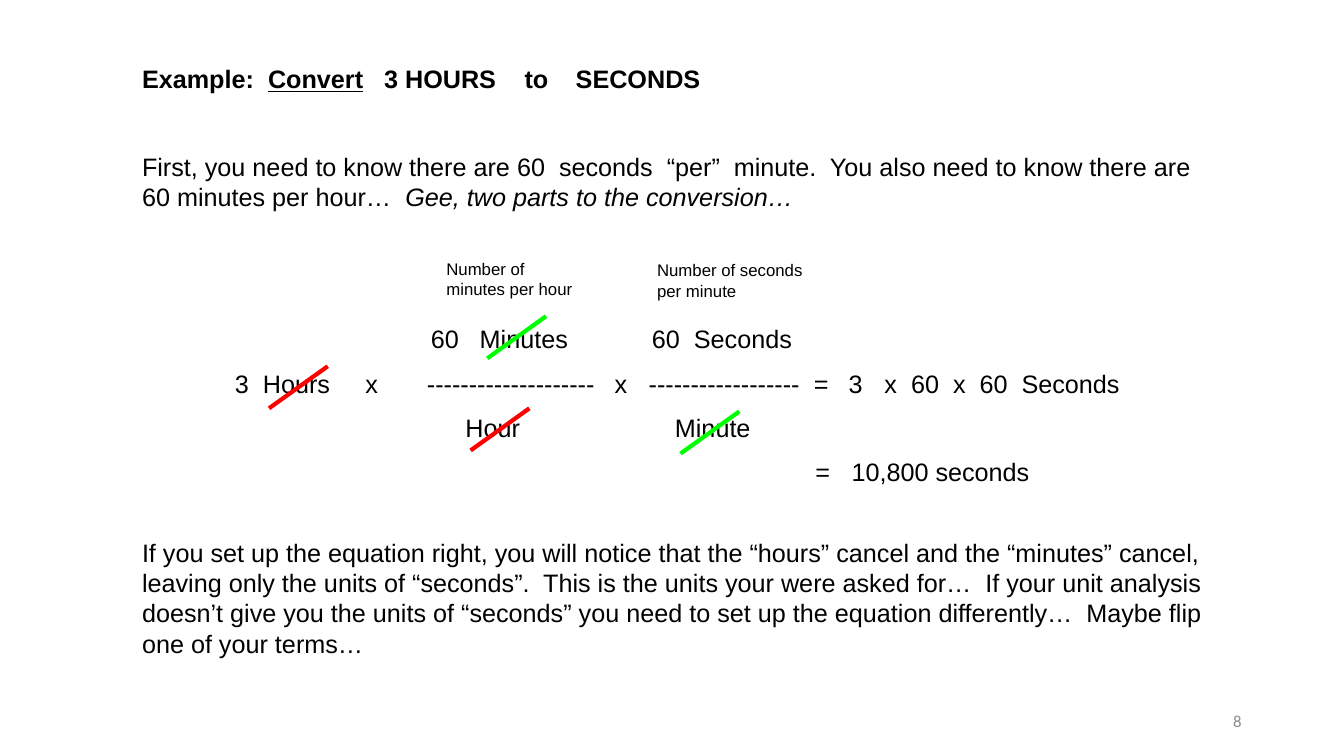
from pptx import Presentation
from pptx.dml.color import RGBColor
from pptx.enum import shapes, text
from pptx.oxml import ns
from pptx.util import Cm, Pt
from lxml import etree

BLACK = RGBColor(0, 0, 0)
GREY = RGBColor(0x8C, 0x8C, 0x8C)
RED = RGBColor(0xFF, 0, 0)
GREEN = RGBColor(0, 0xFF, 0)

TITLE = [("Example:  ", "b"), ("Convert", "bu"), ("\t3 HOURS\tto\tSECONDS", "b")]
FACTS = [
    ("First, you need to know there are 60  seconds  “per”  minute.  "
     "You also need to know there are 60 minutes per hour…  ", ""),
    ("Gee, two parts to the conversion…", "i"),
]
CLOSE = (
    "If you set up the equation right, you will notice that the “hours” cancel "
    "and the “minutes” cancel, leaving only the units of “seconds”.  This is the "
    "units your were asked for…  If your unit analysis doesn’t give you the units "
    "of “seconds” you need to set up the equation differently…  Maybe flip one of "
    "your terms…"
)
MATH = [
    [(5.1, "60"), (6.33, "Minutes"), (10.67, "60  Seconds")],
    [(0.16, "3  Hours"), (3.45, "x"), (5, "-" * 20), (9.73, "x"),
     (10.59, "-" * 18), (14.75, "="), (15.63, "3"), (16.53, "x  60  x  60  Seconds")],
    [(5.97, "Hour"), (11.25, "Minute")],
    [(14.79, "="), (15.7, "10,800 seconds")],
]
NOTES = [
    (11, 6.4, 3.81, "Number of minutes per hour"),
    (16.31, 6.43, 4.65, "Number of seconds per minute"),
]
STRIKES = [
    (6.78, 10.29, RED), (11.86, 11.35, RED),
    (12.28, 9.03, GREEN), (17.15, 11.43, GREEN),
]


def add_box(slide, x, y, w, h):
    """Add a wrapping text box and return its text frame."""
    frame = slide.shapes.add_textbox(Cm(x), Cm(y), Cm(w), Cm(h)).text_frame
    frame.word_wrap = True
    return frame


def add_runs(para, runs, size=18, font="Arial", color=BLACK):
    """Add runs whose style letters are b, i and u."""
    for words, style in runs:
        run = para.add_run()
        run.text = words
        run.font.name, run.font.size = font, Pt(size)
        run.font.color.rgb = color
        run.font.bold = "b" in style
        run.font.italic = "i" in style
        run.font.underline = "u" in style


def set_tabs(para, stops):
    """Give a paragraph left tab stops, in centimetres."""
    tabs = etree.SubElement(para._p.get_or_add_pPr(), ns.qn("a:tabLst"))
    for stop in stops:
        etree.SubElement(tabs, ns.qn("a:tab"), pos=str(int(Cm(stop))), algn="l")


def add_math(slide):
    """Set the conversion out in columns on tab stops."""
    frame = add_box(slide, 5.51, 8.03, 23.5, 4.5)
    for row, terms in enumerate(MATH):
        para = frame.add_paragraph() if row else frame.paragraphs[0]
        if row:
            para.space_before = Pt(10)
        set_tabs(para, [stop for stop, _ in terms])
        add_runs(para, [("\t" + term, "") for _, term in terms])


def add_strike(slide, x, y, color):
    """Cross out a unit with a rising line."""
    line = slide.shapes.add_connector(
        shapes.MSO_CONNECTOR.STRAIGHT, Cm(x), Cm(y), Cm(x + 1.48), Cm(y - 1.06))
    line.line.color.rgb = color
    line.line.width = Pt(3)
    etree.SubElement(line._element.spPr, ns.qn("a:effectLst"))


def add_intro(slide):
    """Add the heading and the facts below it."""
    frame = add_box(slide, 3.33, 1.48, 27.46, 4.11)
    head = frame.paragraphs[0]
    set_tabs(head, [6.1, 9.64, 10.93])
    add_runs(head, TITLE)
    facts = frame.add_paragraph()
    facts.space_before = Pt(41)
    add_runs(facts, FACTS)


def add_page(slide):
    """Add the page number at the lower right."""
    frame = add_box(slide, 23.92, 17.65, 7.62, 1.01)
    frame.vertical_anchor = text.MSO_ANCHOR.MIDDLE
    para = frame.paragraphs[0]
    para.alignment = text.PP_ALIGN.RIGHT
    add_runs(para, [("8", "")], 12, "Calibri", GREY)


def main():
    """Build the slide and save it."""
    deck = Presentation()
    deck.slide_width, deck.slide_height = Cm(33.87), Cm(19.05)
    slide = deck.slides.add_slide(deck.slide_layouts[6])
    add_math(slide)
    for strike in STRIKES:
        add_strike(slide, *strike)
    close = add_box(slide, 3.33, 13.41, 27.86, 3.33)
    add_runs(close.paragraphs[0], [(CLOSE, "")])
    for x, y, w, words in NOTES:
        note = add_box(slide, x, y, w, 1.27)
        add_runs(note.paragraphs[0], [(words, "")], 12)
    add_page(slide)
    add_intro(slide)
    deck.save("out.pptx")


if __name__ == "__main__":
    main()
